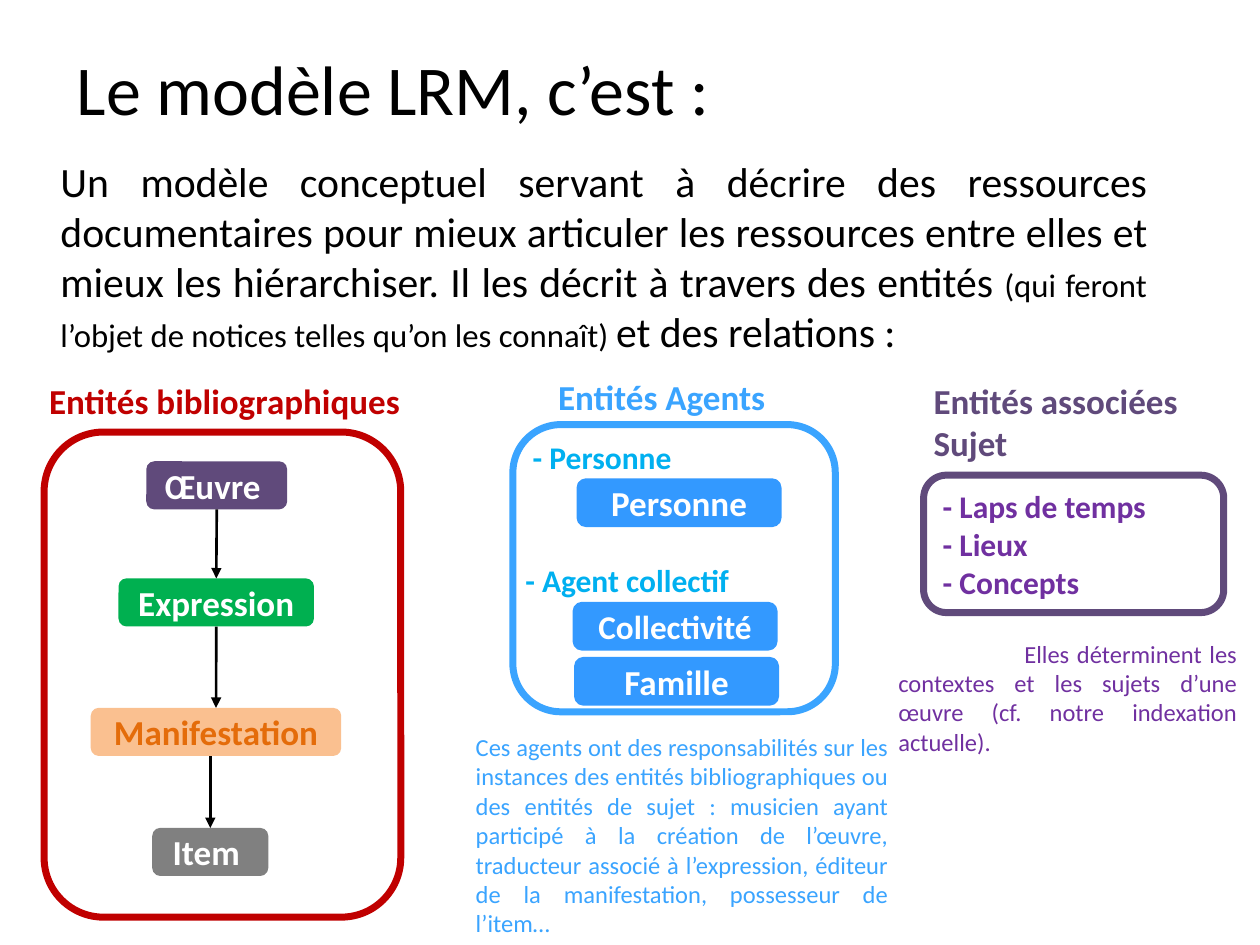
from lxml import etree
from pptx import Presentation
from pptx.dml.color import RGBColor
from pptx.enum import shapes, text
from pptx.oxml import ns
from pptx.util import Cm, Pt

FONT = "Calibri"
BLACK = RGBColor(0, 0, 0)
WHITE = RGBColor(0xFF, 0xFF, 0xFF)
RED = RGBColor(0xC0, 0, 0)
PLUM = RGBColor(0x60, 0x4A, 0x7B)
VIOLET = RGBColor(0x70, 0x30, 0xA0)
GREEN = RGBColor(0, 0xB0, 0x50)
PEACH = RGBColor(0xFA, 0xC0, 0x90)
ORANGE = RGBColor(0xE4, 0x6C, 0x0A)
GREY = RGBColor(0x80, 0x80, 0x80)
SKY = RGBColor(0x3A, 0xA4, 0xFF)
BLUE = RGBColor(0x33, 0x99, 0xFF)
CYAN = RGBColor(0, 0xB0, 0xF0)

LEFT, CENTER, JUSTIFY = text.PP_ALIGN.LEFT, text.PP_ALIGN.CENTER, text.PP_ALIGN.JUSTIFY


def style(para, size, color, bold=False, align=LEFT):
    para.alignment = align
    para.font.name = FONT
    para.font.size = Pt(size)
    para.font.bold = bold
    para.font.color.rgb = color


def add_text(page, x, y, width, height, words, size, color, bold=False, align=LEFT):
    box = page.shapes.add_textbox(Cm(x), Cm(y), Cm(width), Cm(height))
    box.text_frame.word_wrap = True
    para = box.text_frame.paragraphs[0]
    para.text = words
    style(para, size, color, bold, align)
    return box


def add_round_box(page, x, y, width, height, fill=None, line=None, weight=4):
    box = page.shapes.add_shape(shapes.MSO_SHAPE.ROUNDED_RECTANGLE,
                                Cm(x), Cm(y), Cm(width), Cm(height))
    box.shadow.inherit = False
    if fill is None:
        box.fill.background()
    else:
        box.fill.solid()
        box.fill.fore_color.rgb = fill
    if line is None:
        box.line.fill.background()
    else:
        box.line.color.rgb = line
        box.line.width = Pt(weight)
    return box


def add_label(page, x, y, width, height, words, fill, color=WHITE, size=20, line=None):
    box = add_round_box(page, x, y, width, height, fill, line, 2)
    frame = box.text_frame
    frame.word_wrap = True
    frame.margin_top = frame.margin_bottom = 0
    frame.vertical_anchor = text.MSO_ANCHOR.MIDDLE
    frame.paragraphs[0].text = words
    style(frame.paragraphs[0], size, color, True, CENTER)
    return box


def add_arrow(page, upper, lower):
    """Join two stacked labels; stay vertical when their centres differ."""
    upper_x = upper.left + upper.width // 2
    lower_x = lower.left + lower.width // 2
    arrow = page.shapes.add_connector(shapes.MSO_CONNECTOR.STRAIGHT, lower_x,
                                      upper.top + upper.height, lower_x, lower.top)
    if abs(upper_x - lower_x) < Cm(0.05):
        arrow.begin_connect(upper, 2)
    arrow.end_connect(lower, 0)
    arrow.line.color.rgb = BLACK
    arrow.line.width = Pt(1.5)
    etree.SubElement(arrow.line._get_or_add_ln(), ns.qn("a:tailEnd"), type="triangle")
    etree.SubElement(arrow._element.spPr, ns.qn("a:effectLst"))


def add_intro(page, x, y, width):
    title = add_text(page, x + 0.33, y, width, 3.18, "Le modèle LRM, c’est :", 40, BLACK)
    title.text_frame.vertical_anchor = text.MSO_ANCHOR.MIDDLE
    body = add_text(page, x, y + 2.84, width - 0.46, 3.99, "", 23.8, BLACK, align=JUSTIFY)
    para = body.text_frame.paragraphs[0]
    para.space_before = Pt(4.8)
    for words, size in (
        ("Un modèle conceptuel servant à décrire des ressources documentaires pour mieux "
         "articuler les ressources entre elles et mieux les hiérarchiser. Il les décrit "
         "à travers des entités ", 23.8),
        ("(qui feront l’objet de notices telles qu’on les connaît) ", 18.7),
        ("et des relations :", 23.8),
    ):
        span = para.add_run()
        span.text = words
        span.font.size = Pt(size)


def add_bibliographic(page, x, y, width, height):
    add_round_box(page, x, y, width, height, WHITE, RED)
    add_text(page, x - 0.15, y - 1.19, 7.77, 0.94, "Entités bibliographiques", 20, RED, True)
    labels = [
        add_label(page, x + dx, y + dy, label_width, 0.97, words, fill, color)
        for dx, dy, label_width, words, fill, color in (
            (2.06, 0.59, 2.84, "Œuvre ", PLUM, WHITE),
            (1.50, 2.95, 3.94, "Expression", GREEN, WHITE),
            (0.94, 5.56, 5.05, "Manifestation", PEACH, ORANGE),
            (2.18, 7.98, 2.34, "Item ", GREY, WHITE),
        )
    ]
    for upper, lower in zip(labels, labels[1:]):
        add_arrow(page, upper, lower)


def add_agents(page, x, y, width, height):
    add_round_box(page, x, y, width, height, WHITE, SKY)
    add_text(page, x + 0.66, y - 1.12, 5.33, 1.07, "Entités Agents", 20, SKY, True)
    for dx, dy, words in ((0.15, 0.15, "- Personne"), (0, 2.62, "- Agent collectif")):
        add_text(page, x + dx, y + dy, 6.2, 1.02, words, 18, CYAN, True)
    for dx, dy, words, size in ((1.32, 1.12, "Personne", 20),
                                (1.24, 3.61, "Collectivité", 19),
                                (1.27, 4.72, "Famille", 20)):
        add_label(page, x + dx, y + dy, 4.06, 0.91, words, BLUE, size=size, line=BLUE)
    caption = add_text(
        page, x - 1.25, y + 6.07, 9.07, 4.45,
        "Ces agents ont des responsabilités sur les instances des entités bibliographiques "
        "ou des entités de sujet : musicien ayant participé à la création de l’œuvre, "
        "traducteur associé à l’expression, éditeur de la manifestation, possesseur de "
        "l’item…", 14, SKY, align=JUSTIFY)
    caption.text_frame.margin_left = Cm(0.5)


def add_subject(page, x, y, width, height):
    add_text(page, x - 0.05, y - 2.06, 5.64, 1.96, "Entités associées Sujet", 20, PLUM, True)
    box = add_round_box(page, x, y, width, height, line=PLUM)
    frame = box.text_frame
    frame.word_wrap = True
    frame.vertical_anchor = text.MSO_ANCHOR.MIDDLE
    frame.text = "- Laps de temps\n- Lieux\n- Concepts"
    for para in frame.paragraphs:
        style(para, 18, VIOLET, True)
    caption = add_text(
        page, x - 2.24, y + 3.17, 8.81, 2.06,
        "Elles déterminent les contextes et les sujets d’une œuvre (cf. notre indexation "
        "actuelle).", 14, VIOLET, align=JUSTIFY)
    caption.text_frame.margin_left = Cm(1.73)
    caption.text_frame.paragraphs[0]._p.get_or_add_pPr().set("indent", str(Cm(2.54)))


def main():
    deck = Presentation()
    deck.slide_width, deck.slide_height = Cm(25.4), Cm(19.05)
    page = deck.slides.add_slide(deck.slide_layouts[6])
    add_intro(page, 0.97, 0.18, 22.86)
    add_bibliographic(page, 0.89, 8.71, 7.19, 9.78)
    add_agents(page, 10.34, 8.56, 6.5, 5.79)
    add_subject(page, 18.62, 9.58, 6.05, 2.77)
    deck.save("out.pptx")


if __name__ == "__main__":
    main()
